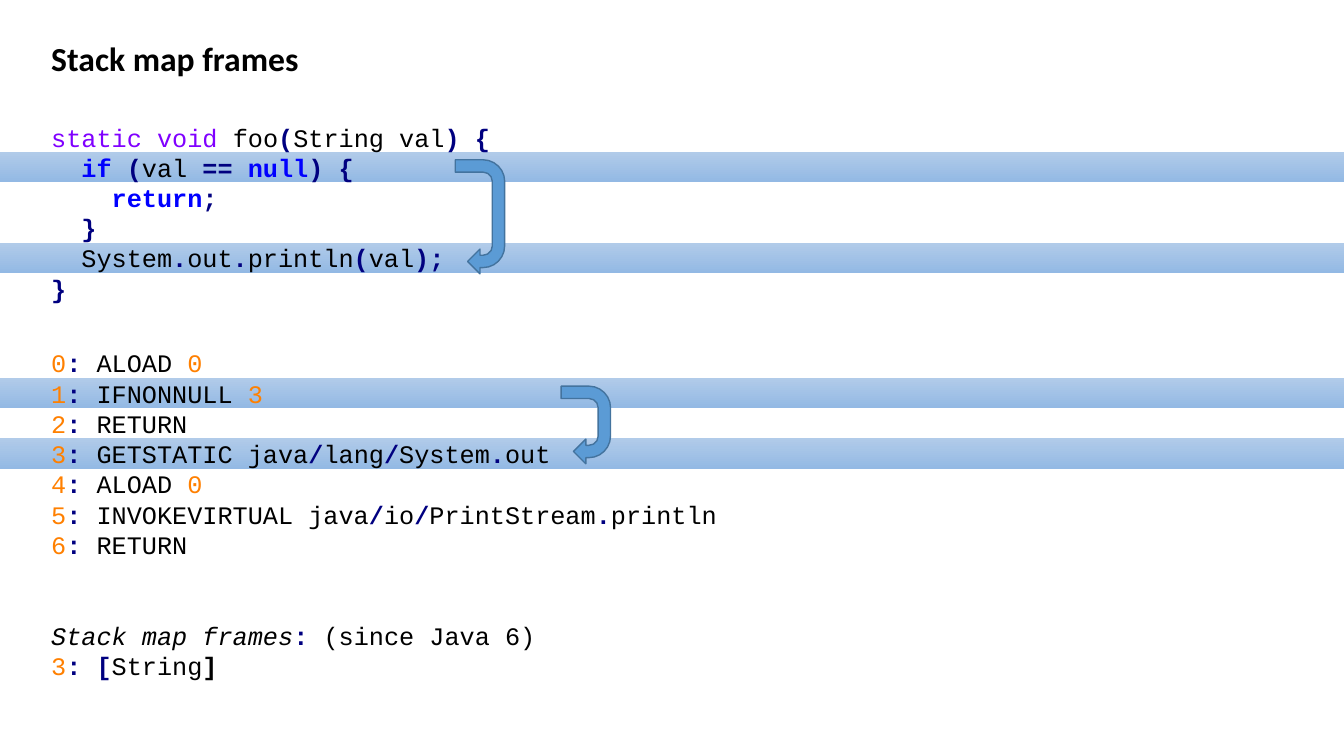
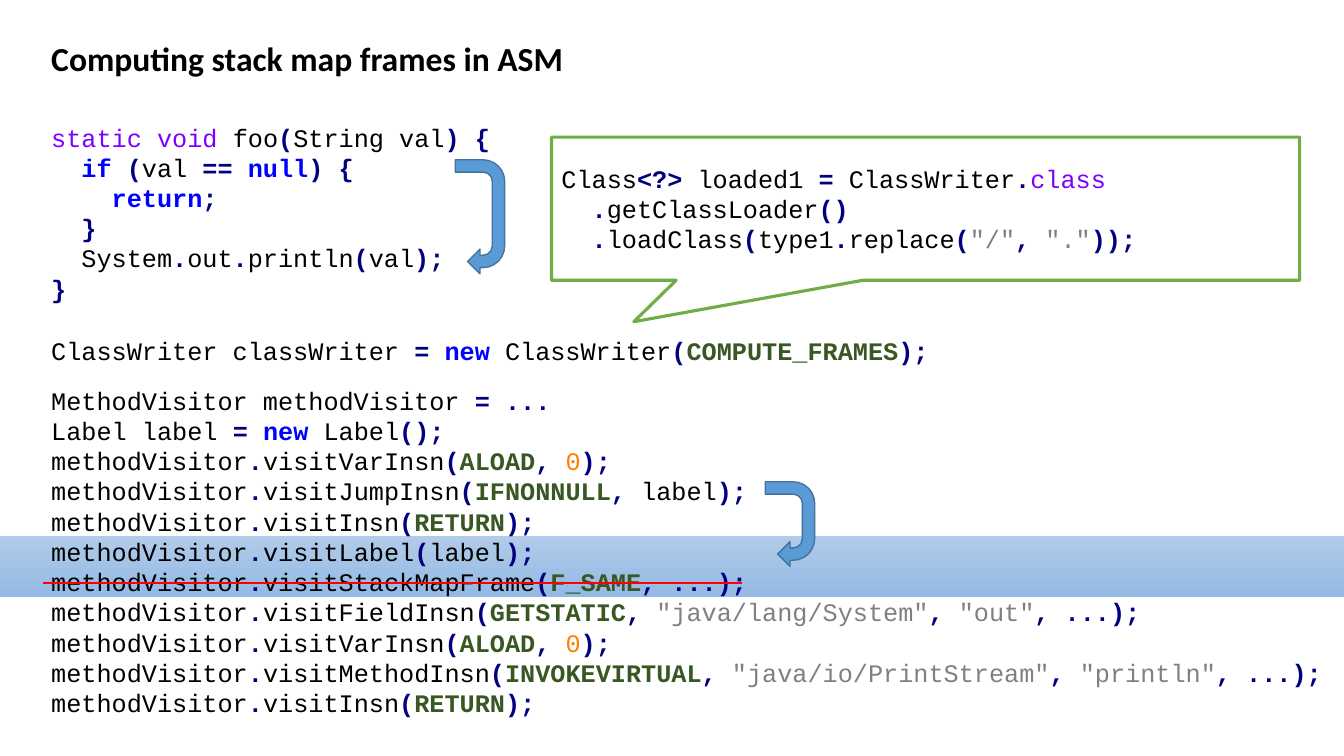
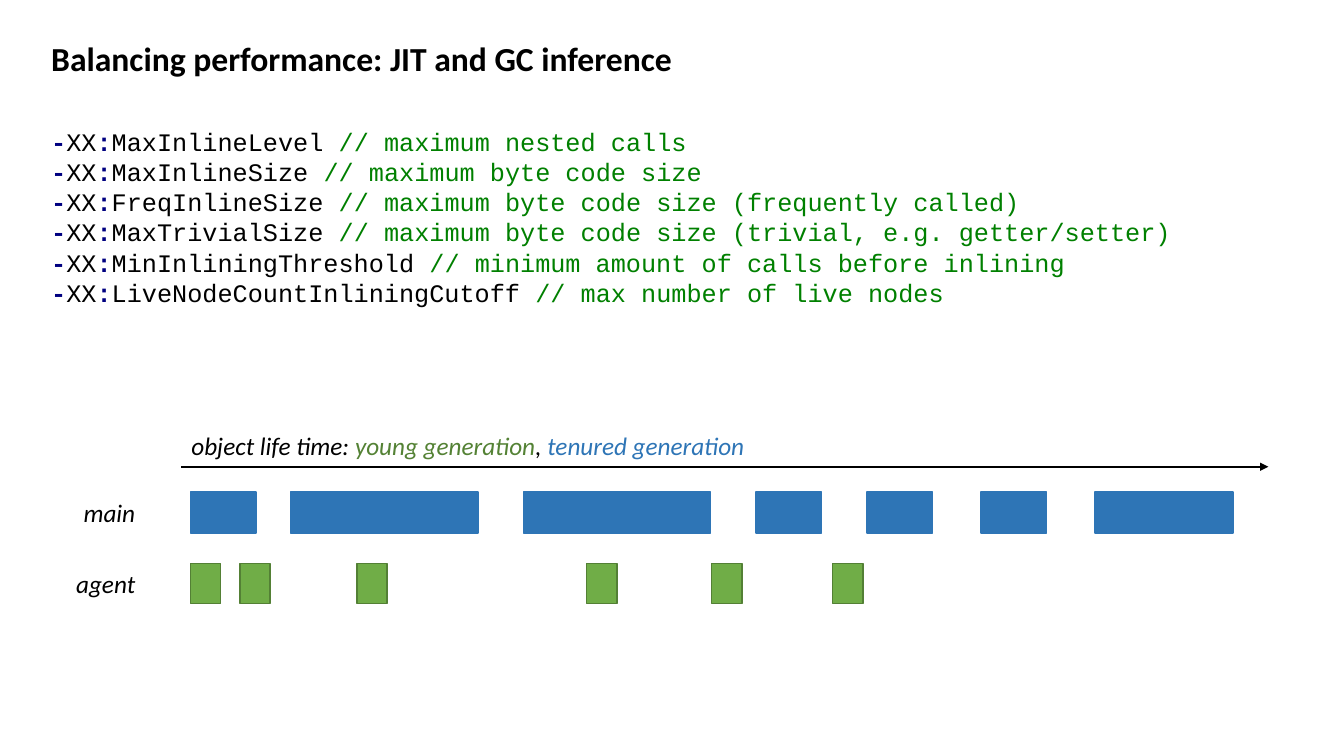
"""Build three slides on stack map frames, their computation, and JIT and GC inference."""
from itertools import groupby

from lxml import etree
from pptx import Presentation
from pptx import util as u
from pptx.dml.color import RGBColor
from pptx.enum import shapes, text
from pptx.oxml.ns import qn

BLACK = RGBColor(0x00, 0x00, 0x00)
WHITE = RGBColor(0xFF, 0xFF, 0xFF)
NAVY = RGBColor(0x00, 0x00, 0x80)
BLUE = RGBColor(0x00, 0x00, 0xFF)
PURPLE = RGBColor(0x80, 0x00, 0xFF)
ORANGE = RGBColor(0xFF, 0x80, 0x00)
GRAY = RGBColor(0x80, 0x80, 0x80)
RED = RGBColor(0xFF, 0x00, 0x00)
COMMENT_GREEN = RGBColor(0x00, 0x80, 0x00)
CONSTANT_GREEN = RGBColor(0x38, 0x57, 0x23)
YOUNG_TEXT = RGBColor(0x54, 0x82, 0x35)
YOUNG_FILL = RGBColor(0x70, 0xAD, 0x47)
YOUNG_EDGE = RGBColor(0x53, 0x80, 0x35)
TENURED = RGBColor(0x2E, 0x75, 0xB6)
JUMP_FILL = RGBColor(0x5B, 0x9B, 0xD5)
JUMP_EDGE = RGBColor(0x43, 0x73, 0x9E)
BAND_TOP = RGBColor(0xB1, 0xCB, 0xE9)
BAND_BOTTOM = RGBColor(0x93, 0xB9, 0xE4)

WIDTH, HEIGHT = 13.33, 7.5
MARGIN, ROW, COLUMN = 0.41, 0.3, 0.15
INSET_X, INSET_Y = 0.1, 0.05
TEXT_LEFT = MARGIN + INSET_X
JUMP_WIDTH = 0.49
CODE_FONT, LABEL_FONT = "Courier New", "Calibri"
SYMBOLS = "(){}[]<>.,;:=/?-"

# Markup tags: colour, bold, italic
STYLES = {
    "plain": (BLACK, False, False),
    "symbol": (NAVY, True, False),
    "bold": (BLACK, True, False),
    "italic": (BLACK, False, True),
    "type": (PURPLE, False, False),
    "key": (BLUE, True, False),
    "num": (ORANGE, False, False),
    "str": (GRAY, False, False),
    "const": (CONSTANT_GREEN, True, False),
    "note": (COMMENT_GREEN, False, False),
    "young": (YOUNG_TEXT, False, True),
    "tenured": (TENURED, False, True),
}


def block(slide, kind, left, top, width, height, fill, edge=None, weight=1):
    shape = slide.shapes.add_shape(kind, *map(u.Inches, (left, top, width, height)))
    shape.shadow.inherit = False
    shape.fill.solid()
    shape.fill.fore_color.rgb = fill
    if edge is None:
        shape.line.fill.background()
    else:
        shape.line.color.rgb = edge
        shape.line.width = u.Pt(weight)
    return shape


def write(shape, markup, font=CODE_FONT, size=18, align=text.PP_ALIGN.LEFT):
    frame = shape.text_frame
    frame.word_wrap = True
    lines = markup.split("\n")
    frame.text = "\n".join([""] * len(lines))
    for paragraph, line in zip(frame.paragraphs, lines):
        paragraph.alignment = align
        pieces = []
        for index, chunk in enumerate(line.split("|")):
            if index % 2:
                tag, words = chunk.split(":", 1)
                pieces.append((words, tag))
            else:
                for is_symbol, letters in groupby(chunk, lambda letter: letter in SYMBOLS):
                    pieces.append(("".join(letters), "symbol" if is_symbol else "plain"))
        for words, tag in pieces:
            run = paragraph.add_run()
            run.text = words
            run.font.name, run.font.size = font, u.Pt(size)
            run.font.color.rgb, run.font.bold, run.font.italic = STYLES[tag]


METHOD = """|type:static void |foo(String val) {
  |key:if |(val == |key:null|) {
    |key:return|;
  }
  System.out.println(val);
}"""

BYTECODE = """|num:0|: ALOAD |num:0|
|num:1|: IFNONNULL |num:3|
|num:2|: RETURN
|num:3|: GETSTATIC java/lang/System.out
|num:4|: ALOAD |num:0|
|num:5|: INVOKEVIRTUAL java/io/PrintStream.println
|num:6|: RETURN"""

FRAMES = """|italic:Stack map frames|: |plain:(since Java 6)|
|num:3|: [String|bold:]|"""

WRITER = "ClassWriter classWriter = |key:new |ClassWriter(|const:COMPUTE_FRAMES|);"

VISITS = """MethodVisitor methodVisitor = ...
Label label = |key:new |Label();
methodVisitor.visitVarInsn(|const:ALOAD|, |num:0|);
methodVisitor.visitJumpInsn(|const:IFNONNULL|, label);
methodVisitor.visitInsn(|const:RETURN|);
methodVisitor.visitLabel(label);
methodVisitor.visitStackMapFrame(|const:F_SAME|, ...);
methodVisitor.visitFieldInsn(|const:GETSTATIC|, |str:"java/lang/System"|, |str:"out"|, ...);
methodVisitor.visitVarInsn(|const:ALOAD|, |num:0|);
methodVisitor.visitMethodInsn(|const:INVOKEVIRTUAL|, |str:"java/io/PrintStream"|, |str:"println"|, ...);
methodVisitor.visitInsn(|const:RETURN|);"""

LOADER = """Class<?> loaded1 = ClassWriter.|type:class|
  .getClassLoader()
  .loadClass(type1.replace(|str:"/"|, |str:"."|));"""

OPTIONS = "\n".join(f"-XX:{option} |note:// {meaning}|" for option, meaning in (
    ("MaxInlineLevel", "maximum nested calls"),
    ("MaxInlineSize", "maximum byte code size"),
    ("FreqInlineSize", "maximum byte code size (frequently called)"),
    ("MaxTrivialSize", "maximum byte code size (trivial, e.g. getter/setter)"),
    ("MinInliningThreshold", "minimum amount of calls before inlining"),
    ("LiveNodeCountInliningCutoff", "max number of live nodes"),
))

# Passage: top, code, bands (row, rows), jumps (column, row, rows)
METHOD_JUMP = (26.7, 1.25, 3.77)
PAGES = (
    ("Stack map frames", (
        (1.16, METHOD, ((1, 1), (4, 1)), (METHOD_JUMP,)),
        (3.4, BYTECODE, ((1, 1), (3, 1)), ((33.7, 1.27, 2.57),)),
        (6.1, FRAMES, (), ()),
    )),
    ("Computing stack map frames in ASM", (
        (1.16, METHOD, (), (METHOD_JUMP,)),
        (3.28, WRITER, (), ()),
        (3.77, VISITS, ((5, 2),), ((47.2, 3.2, 2.8),)),
    )),
    ("Balancing performance: JIT and GC inference", (
        (1.2, OPTIONS, (), ()),
    )),
)

deck = Presentation()
deck.slide_width, deck.slide_height = u.Inches(WIDTH), u.Inches(HEIGHT)
pages = []
for title, passages in PAGES:
    page = deck.slides.add_slide(deck.slide_layouts[6])
    pages.append(page)
    heading = page.shapes.add_textbox(*map(u.Inches, (MARGIN, 0.33, WIDTH - 2 * MARGIN, 0.5)))
    write(heading, f"|bold:{title}|", LABEL_FONT, 24)
    for top, code, bands, jumps in passages:
        first_row = top + INSET_Y
        for row, rows in bands:
            band = block(page, shapes.MSO_SHAPE.RECTANGLE, 0, first_row + row * ROW,
                         WIDTH, rows * ROW, BAND_TOP)
            band.fill.gradient()
            band.fill.gradient_angle = 270
            for stop, colour in zip(band.fill.gradient_stops, (BAND_TOP, BAND_BOTTOM)):
                stop.color.rgb = colour
        passage = page.shapes.add_textbox(*map(u.Inches, (
            MARGIN, top, WIDTH - MARGIN, (code.count("\n") + 1) * ROW + 2 * INSET_Y)))
        write(passage, code)
        for column, row, rows in jumps:
            length = rows * ROW
            turn = (length - JUMP_WIDTH) / 2
            jump = block(page, shapes.MSO_SHAPE.U_TURN_ARROW,
                         TEXT_LEFT + column * COLUMN - turn, first_row + row * ROW + turn,
                         length, JUMP_WIDTH, JUMP_FILL, JUMP_EDGE)
            jump.rotation = 90

frames_page, computing_page, balancing_page = pages

callout = block(computing_page, shapes.MSO_SHAPE.RECTANGULAR_CALLOUT,
                5.47, 1.36, 7.42, 1.42, WHITE, YOUNG_FILL, 2.25)
callout.adjustments[0], callout.adjustments[1] = -0.39, 0.79
callout.text_frame.vertical_anchor = text.MSO_ANCHOR.MIDDLE
write(callout, LOADER)

AXIS_LEFT, AXIS_TOP = 1.8, 4.63
STRIKE_TOP = 3.77 + INSET_Y + 6.55 * ROW
for page, left, right, top, colour, pointed in (
    (computing_page, 0.43, 7.36, STRIKE_TOP, RED, False),
    (balancing_page, AXIS_LEFT, 12.58, AXIS_TOP, BLACK, True),
):
    rule = page.shapes.add_connector(shapes.MSO_CONNECTOR.STRAIGHT,
                                     *map(u.Inches, (left, top, right, top)))
    rule.line.color.rgb = colour
    rule.line.width = u.Pt(1.5)
    outline = rule._element.spPr
    if pointed:
        etree.SubElement(outline.find(qn("a:ln")), qn("a:tailEnd"), type="triangle")
    etree.SubElement(outline, qn("a:effectLst"))

legend = balancing_page.shapes.add_textbox(*map(u.Inches, (AXIS_LEFT, 4.22, 6, 0.4)))
write(legend, "|italic:object life time: ||young:young generation||italic:, |"
              "|tenured:tenured generation|", LABEL_FONT)

SHORT, MEDIUM, LONG = 0.65, 1.37, 1.86
LANES = (
    ("main", 4.88, 0.41, TENURED, TENURED,
     ((1.89, SHORT), (2.88, LONG), (5.19, LONG), (7.5, SHORT),
      (8.6, SHORT), (9.73, SHORT), (10.86, MEDIUM))),
    ("agent", 5.59, 0.4, YOUNG_FILL, YOUNG_EDGE,
     [(left, 0.3) for left in (1.89, 2.38, 3.54, 5.82, 7.06, 8.26)]),
)
for thread, top, height, fill, edge, lifetimes in LANES:
    label = balancing_page.shapes.add_textbox(*map(u.Inches, (MARGIN, top, 1.03, 0.4)))
    write(label, f"|italic:{thread}|", LABEL_FONT, align=text.PP_ALIGN.RIGHT)
    for left, width in lifetimes:
        block(balancing_page, shapes.MSO_SHAPE.RECTANGLE, left, top, width, height, fill, edge)

deck.save("out.pptx")
